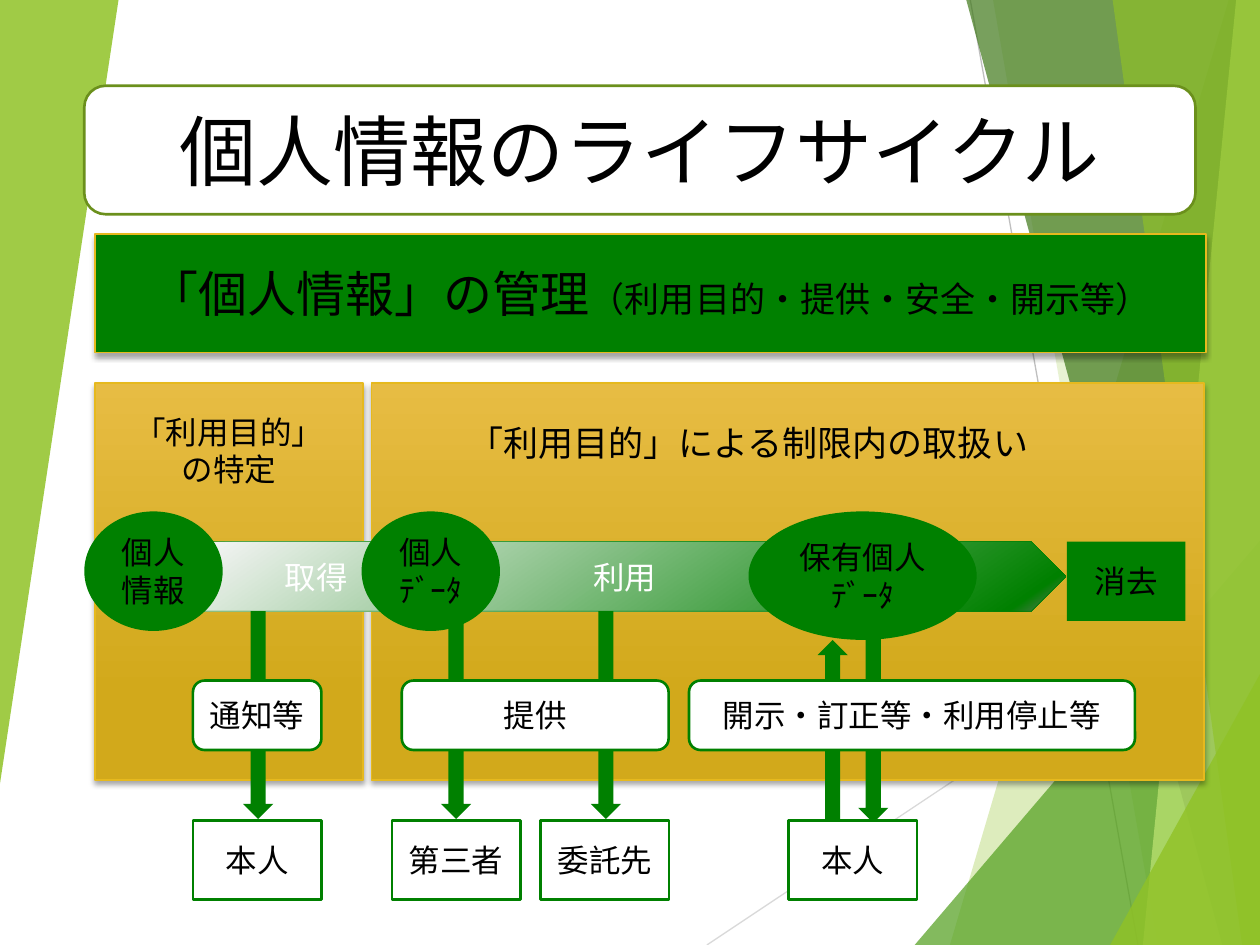
from lxml import etree
from pptx import Presentation
from pptx.dml.color import RGBColor
from pptx.enum.shapes import MSO_CONNECTOR, MSO_SHAPE
from pptx.enum.text import MSO_ANCHOR, PP_ALIGN
from pptx.oxml.ns import qn
from pptx.util import Cm, Pt

RECTANGLE = MSO_SHAPE.RECTANGLE
ROUNDED = MSO_SHAPE.ROUNDED_RECTANGLE
OVAL = MSO_SHAPE.FLOWCHART_CONNECTOR
PENTAGON = MSO_SHAPE.PENTAGON
DOWN_ARROW = MSO_SHAPE.DOWN_ARROW
STRAIGHT = MSO_CONNECTOR.STRAIGHT
TOP, MIDDLE = MSO_ANCHOR.TOP, MSO_ANCHOR.MIDDLE
LEFT, CENTER = PP_ALIGN.LEFT, PP_ALIGN.CENTER

WHITE = RGBColor(0xFF, 0xFF, 0xFF)
BLACK = RGBColor(0x00, 0x00, 0x00)
GRAY = RGBColor(0x75, 0x75, 0x75)
LIGHT_GRAY = RGBColor(0xD9, 0xD9, 0xD9)
MID_GRAY = RGBColor(0xBF, 0xBF, 0xBF)
PALE = RGBColor(0xF5, 0xF5, 0xF5)
GREEN = RGBColor(0x00, 0x80, 0x00)
OLIVE = RGBColor(0x6B, 0x90, 0x1C)
LIME = RGBColor(0x90, 0xC2, 0x26)
LEAF = RGBColor(0x54, 0xA0, 0x21)
FOREST = RGBColor(0x3F, 0x78, 0x19)
PALE_LIME = RGBColor(0xC0, 0xE4, 0x74)
GOLD = RGBColor(0xE6, 0xB9, 0x1E)
GOLD_LIGHT = RGBColor(0xE7, 0xBC, 0x43)
GOLD_DARK = RGBColor(0xD2, 0xA9, 0x1B)

WIDTH, HEIGHT = 25.4, 19.05
PANEL_STOPS = [(0, GOLD_LIGHT), (78, GOLD_DARK)]
FLOW_STOPS = [(0, PALE), (94, GREEN), (100, GRAY)]


def add_element(parent, tag, **attributes):
    return etree.SubElement(parent, qn(tag), {key: str(value) for key, value in attributes.items()})


def set_gradient(shape, stops, angle):
    shape.fill.gradient()
    gradient = shape._element.spPr.find(qn("a:gradFill"))
    for child in list(gradient):
        gradient.remove(child)
    stop_list = add_element(gradient, "a:gsLst")
    for position, color in stops:
        stop = add_element(stop_list, "a:gs", pos=position * 1000)
        add_element(stop, "a:srgbClr", val=color)
    add_element(gradient, "a:lin", ang=angle * 60000, scaled=0)


def add_shadow(shape):
    effects = shape._element.spPr.find(qn("a:effectLst"))
    shadow = add_element(effects, "a:outerShdw", blurRad=Pt(3), dist=Pt(2), dir=90 * 60000, rotWithShape=0)
    color = add_element(shadow, "a:srgbClr", val=BLACK)
    add_element(color, "a:alpha", val=35000)


def write_lines(shape, lines, size, font="Lato", color=BLACK, align=CENTER, anchor=MIDDLE):
    frame = shape.text_frame
    frame.word_wrap = True
    frame.vertical_anchor = anchor
    frame.text = "\n".join(lines)
    for paragraph in frame.paragraphs:
        paragraph.alignment = align
        paragraph.font.name = font
        paragraph.font.size = Pt(size)
        paragraph.font.color.rgb = color


def add_block(slide, kind, box, fill=None, line=None, line_width=1.5, text=None, size=18):
    shape = slide.shapes.add_shape(kind, *map(Cm, box))
    shape.shadow.inherit = False
    if fill is not None:
        shape.fill.solid()
        shape.fill.fore_color.rgb = fill
    if line is None:
        shape.line.fill.background()
    else:
        shape.line.color.rgb = line
        shape.line.width = Pt(line_width)
    if text:
        write_lines(shape, [text], size)
    return shape


def add_label(slide, box, text, size, color):
    label = slide.shapes.add_textbox(*map(Cm, box))
    write_lines(label, [text], size, "Calibri", color, LEFT, TOP)


def add_facet(slide, points, color, opacity):
    corners = [(Cm(x), Cm(y)) for x, y in points]
    builder = slide.shapes.build_freeform(*corners[0])
    builder.add_line_segments(corners[1:], close=True)
    facet = builder.convert_to_shape()
    facet.shadow.inherit = False
    facet.line.fill.background()
    facet.fill.solid()
    facet.fill.fore_color.rgb = color
    color_element = facet._element.spPr.find(qn("a:solidFill"))[0]
    add_element(color_element, "a:alpha", val=opacity * 1000)


def add_backdrop(slide):
    for points, color in [
        ((14.25, HEIGHT, WIDTH, 11.62), LIGHT_GRAY),
        ((19.56, 0, 22.94, HEIGHT), MID_GRAY),
    ]:
        line = slide.shapes.add_connector(STRAIGHT, *map(Cm, points))
        line.line.color.rgb = color
        line.line.width = Pt(0.75)
        add_element(line._element.spPr, "a:effectLst")

    top_right, bottom_right = (WIDTH, 0), (WIDTH, HEIGHT)
    for start, end, color, opacity in [
        ((24.77, 0), (19.15, HEIGHT), LIME, 30),
        ((20.02, 0), (23.34, HEIGHT), LIME, 20),
        ((WIDTH, 10.9), (18.44, HEIGHT), LEAF, 72),
        ((19.48, 0), (24.64, HEIGHT), FOREST, 70),
        ((24.92, 0), (23.04, HEIGHT), PALE_LIME, 70),
        ((22.43, 0), (25.04, HEIGHT), LIME, 65),
        ((WIDTH, 13.59), (22.38, HEIGHT), LIME, 80),
    ]:
        points = [start, end, bottom_right]
        if start[1] == 0:
            points.append(top_right)
        add_facet(slide, points, color, opacity)
    add_facet(slide, [(0, 0), (2.39, 0), (0, 15.8)], LIME, 85)


def add_management_band(slide):
    band = add_block(slide, RECTANGLE, (1.91, 4.72, 22.4, 2.39), GREEN, GOLD, 1)
    add_shadow(band)
    write_lines(band, ["「個人情報」の管理"], 28)
    detail = band.text_frame.paragraphs[0].add_run()
    detail.text = "（利用目的・提供・安全・開示等）"
    detail.font.size = Pt(20)


def add_panel(slide, left, width):
    panel = add_block(slide, RECTANGLE, (left, 7.72, width, 8), line=GOLD, line_width=1)
    set_gradient(panel, PANEL_STOPS, 90)
    add_shadow(panel)
    return panel


def add_life_cycle(slide):
    flow = add_block(slide, PENTAGON, (4.09, 10.92, 17.4, 1.4), line=GREEN, line_width=0.25)
    set_gradient(flow, FLOW_STOPS, 55)
    for left, width, height, text in [
        (1.7, 2.79, 2.41, "個人情報"),
        (7.29, 2.79, 2.41, "個人ﾃﾞｰﾀ"),
        (15.09, 4.6, 2.59, "保有個人ﾃﾞｰﾀ"),
    ]:
        add_block(slide, OVAL, (left, 10.31, width, height), GREEN, text=text)
    for left, text in [(5.49, "取得"), (11.71, "利用")]:
        add_label(slide, (left, 11.13, 1.8, 1.02), text, 18, WHITE)
    add_label(slide, (9.19, 8.38, 13.21, 1.12), "「利用目的」による制限内の取扱い", 20, BLACK)
    add_block(slide, RECTANGLE, (21.51, 10.92, 2.39, 1.6), GREEN, text="消去")


def add_exchanges(slide):
    for left, top, height, rotation in [
        (4.9, 12.32, 4.19, 0),
        (8.89, 12.32, 4.19, 0),
        (11.91, 12.32, 4.19, 0),
        (17.3, 12.4, 4.19, 0),
        (16.48, 12.9, 3.61, 180),
    ]:
        arrow = add_block(slide, DOWN_ARROW, (left, top, 0.61, height), GREEN)
        arrow.rotation = rotation
    for left, width, text in [
        (3.89, 2.59, "通知等"),
        (8.1, 5.38, "提供"),
        (13.89, 8.99, "開示・訂正等・利用停止等"),
    ]:
        add_block(slide, ROUNDED, (left, 13.72, width, 1.4), WHITE, GREEN, text=text)
    for left, text in [(3.89, "本人"), (7.9, "第三者"), (10.9, "委託先"), (15.9, "本人")]:
        add_block(slide, RECTANGLE, (left, 16.54, 2.59, 1.6), WHITE, GREEN, text=text)


def main():
    presentation = Presentation()
    presentation.slide_width, presentation.slide_height = Cm(WIDTH), Cm(HEIGHT)
    slide = presentation.slides.add_slide(presentation.slide_layouts[6])
    add_backdrop(slide)
    add_block(slide, ROUNDED, (1.7, 1.73, 22.4, 2.59), WHITE, OLIVE, text="個人情報のライフサイクル", size=44)
    add_management_band(slide)
    purpose = add_panel(slide, 1.91, 5.41)
    write_lines(purpose, ["「利用目的」", "の特定"], 18, anchor=TOP)
    purpose.text_frame.margin_top = Cm(0.6)
    add_panel(slide, 7.49, 16.79)
    add_life_cycle(slide)
    add_exchanges(slide)
    presentation.save("out.pptx")


if __name__ == "__main__":
    main()
